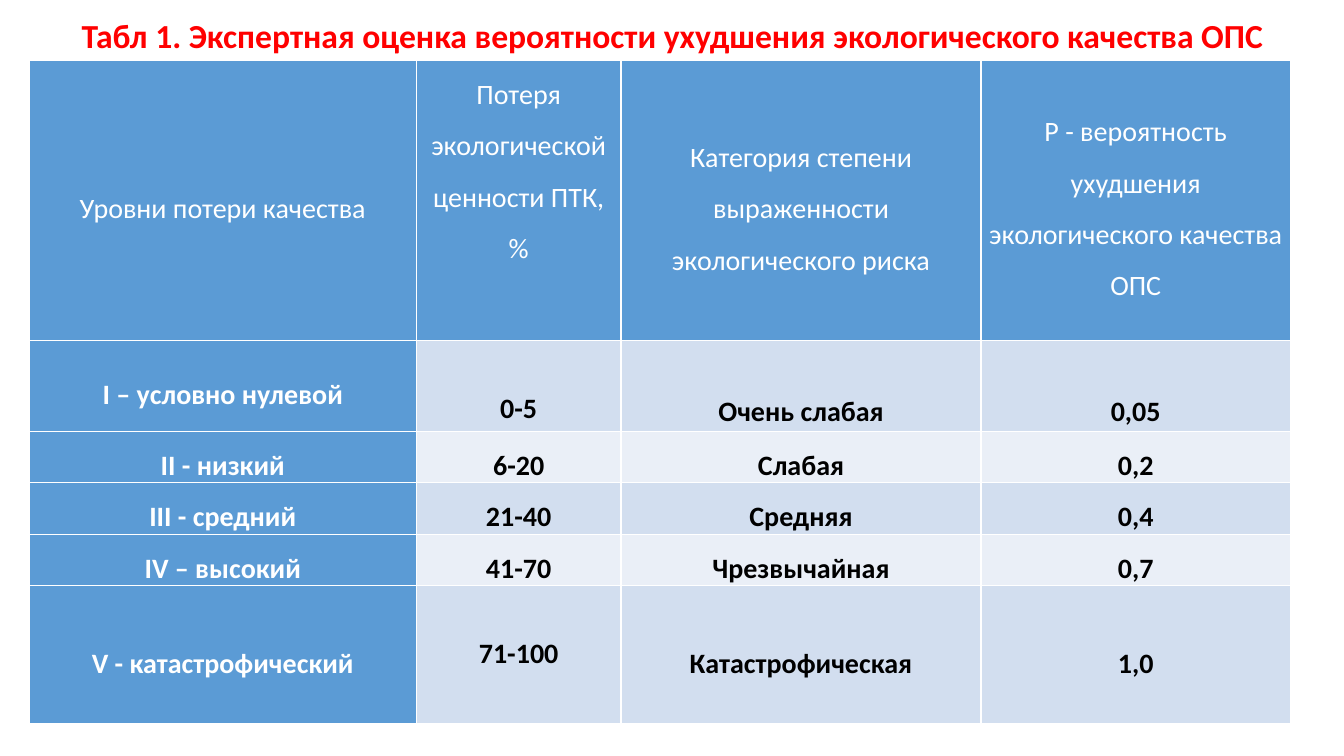
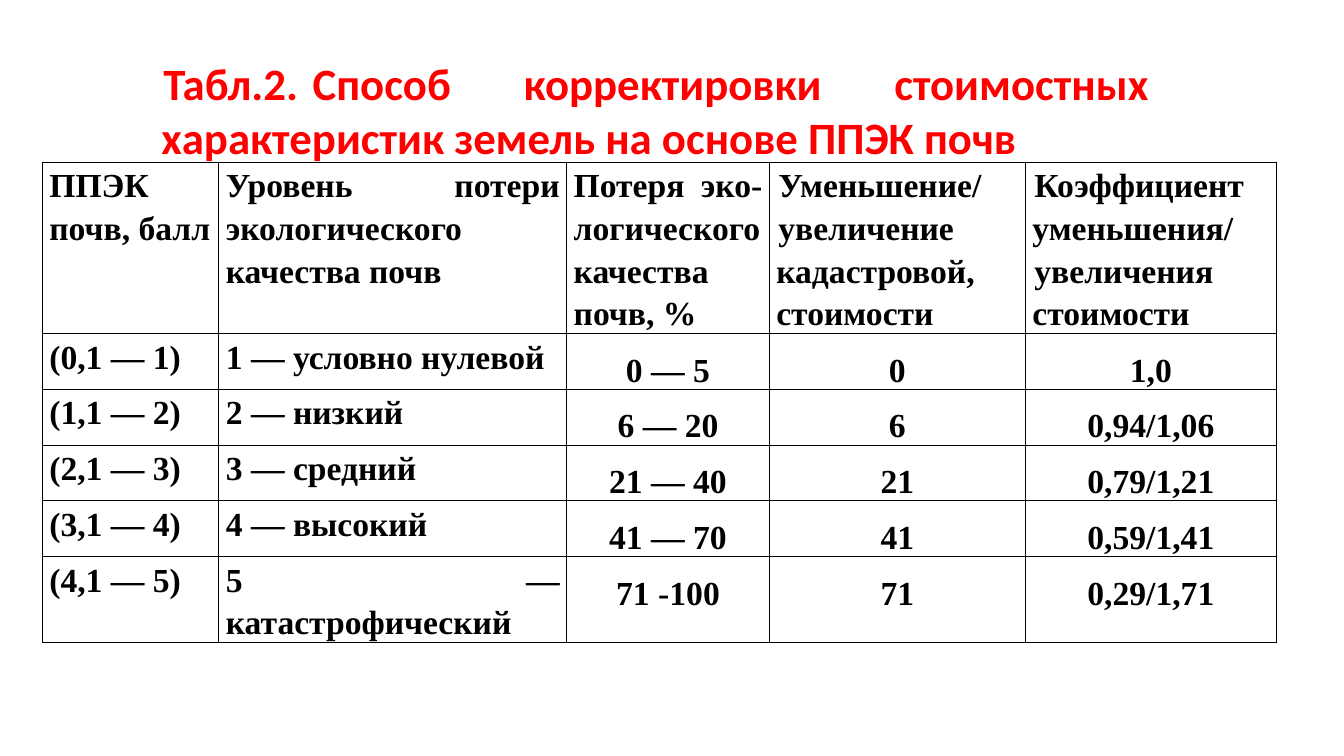
from dataclasses import dataclass

from lxml.etree import SubElement
from pptx import Presentation
from pptx.dml.color import RGBColor
from pptx.enum.text import MSO_ANCHOR, MSO_AUTO_SIZE, PP_ALIGN
from pptx.oxml.ns import qn
from pptx.util import Inches, Pt


@dataclass(frozen=True)
class Theme:
    """Colours, fonts and type sizes shared by the slides."""

    title: str = "FF0000"
    accent: str = "5B9BD5"
    band_dark: str = "D2DEEF"
    band_light: str = "EAEFF7"
    light: str = "FFFFFF"
    dark: str = "000000"
    sans: str = "Calibri"
    serif: str = "Times New Roman"
    small_title: int = 24
    large_title: int = 32
    risk_text: int = 20
    cost_text: int = 24
    border: float = 1


THEME = Theme()
FIRST_LINE = Inches(0.02)
LOWERED = Inches(0.34)

RISK_COLUMNS = [3.84, 2.03, 3.57, 3.07]
RISK_HEIGHTS = [2.78, 0.9, 0.51, 0.51, 0.51, 1.37]
RISK_ROWS = [
    ["Уровни потери качества", "Потеря экологической ценности ПТК, %",
     "Категория степени выраженности экологического риска",
     "P - вероятность ухудшения экологического качества ОПС"],
    ["I – условно нулевой", "0-5", "Очень слабая", "0,05"],
    ["II - низкий", "6-20", "Слабая", "0,2"],
    ["III - средний", "21-40", "Средняя", "0,4"],
    ["IV – высокий", "41-70", "Чрезвычайная", "0,7"],
    ["V - катастрофический", "71-100", "Катастрофическая", "1,0"],
]
LOWERED_CELLS = {(1, 1), (1, 2), (1, 3), (5, 1)}

COST_COLUMNS = [1.75, 3.45, 2.01, 2.54, 2.49]
COST_HEIGHTS = [1.7, 0.55, 0.55, 0.55, 0.55, 0.85]
COST_ROWS = [
    ["ППЭК почв, балл", "Уровень потери экологического качества почв",
     "Потеря эко-логического качества почв, %",
     "Уменьшение/\nувеличение кадастровой, стоимости",
     "Коэффициент уменьшения/\nувеличения стоимости"],
    ["(0,1 — 1)", "1 — условно нулевой", "0 — 5", "0", "1,0"],
    ["(1,1 — 2)", "2 — низкий", "6 — 20", "6", "0,94/1,06"],
    ["(2,1 — 3)", "3 — средний", "21 — 40", "21", "0,79/1,21"],
    ["(3,1 — 4)", "4 — высокий", "41 — 70", "41", "0,59/1,41"],
    ["(4,1 — 5)", "5 — катастрофический", "71 -100", "71", "0,29/1,71"],
]


def apply_format(target, values):
    """Set every attribute named in values on the target."""
    for name, value in values.items():
        setattr(target, name, value)


def write_text(frame, text, font, color, para_format, indent=0, tab=None):
    """Fill a text frame and format its paragraphs and spans."""
    frame.text = text
    for para in frame.paragraphs:
        properties = para._p.get_or_add_pPr()
        properties.set("indent", str(indent))
        if tab:
            stops = SubElement(properties, qn("a:tabLst"))
            SubElement(stops, qn("a:tab"), pos=str(tab), algn="l")
        apply_format(para, para_format)
        for span in para.runs:
            apply_format(span.font, font)
            span.font.color.rgb = RGBColor.from_string(color)


def add_title(page, box, text, size, alignment, indent=0, tab=None):
    """Move the title placeholder into the box and write the heading."""
    title = page.shapes.title
    names = ("left", "top", "width", "height")
    apply_format(title, dict(zip(names, map(Inches, box))))
    frame = title.text_frame
    apply_format(frame, {"word_wrap": True, "auto_size": MSO_AUTO_SIZE.NONE,
                         "vertical_anchor": MSO_ANCHOR.MIDDLE})
    font = {"name": THEME.sans, "size": Pt(size), "bold": True}
    write_text(frame, text, font, THEME.title,
               {"alignment": alignment, "line_spacing": 1.0}, indent, tab)


def add_borders(cell, color):
    """Draw the four borders of a cell."""
    properties = cell._tc.get_or_add_tcPr()
    for side in ("lnL", "lnR", "lnT", "lnB"):
        line = SubElement(properties, qn(f"a:{side}"), w=str(Pt(THEME.border)))
        fill = SubElement(line, qn("a:solidFill"))
        SubElement(fill, qn("a:srgbClr"), val=color)


def add_grid(page, left, top, columns, heights, rows, border, style_cell):
    """Place a table whose cells are formatted by the given function."""
    table = page.shapes.add_table(
        len(rows), len(columns), Inches(left), Inches(top),
        Inches(sum(columns)), Inches(sum(heights))).table
    apply_format(table, {"first_row": False, "horz_banding": False})
    for column, width in zip(table.columns, columns):
        column.width = Inches(width)
    for row, height in zip(table.rows, heights):
        row.height = Inches(height)
    for row_index, texts in enumerate(rows):
        for column_index, text in enumerate(texts):
            cell = table.cell(row_index, column_index)
            apply_format(cell, {"margin_left": Inches(0.07), "margin_right": Inches(0.07),
                                "margin_top": 0, "margin_bottom": 0})
            add_borders(cell, border)
            style_cell(cell, text, row_index, column_index)


def style_risk_cell(cell, text, row, column):
    """Format a cell of the banded risk table."""
    is_heading = row == 0 or column == 0
    band = THEME.band_dark if row % 2 else THEME.band_light
    cell.fill.solid()
    cell.fill.fore_color.rgb = RGBColor.from_string(THEME.accent if is_heading else band)
    cell.vertical_anchor = MSO_ANCHOR.TOP if column == 1 else MSO_ANCHOR.MIDDLE
    if (row, column) in LOWERED_CELLS:
        cell.margin_top = LOWERED
    font = {"name": THEME.sans, "size": Pt(THEME.risk_text), "bold": row > 0}
    write_text(cell.text_frame, text, font, THEME.light if is_heading else THEME.dark,
               {"alignment": PP_ALIGN.CENTER, "line_spacing": 1.5})


def style_cost_cell(cell, text, row, column):
    """Format a cell of the plain cost table."""
    is_value = row > 0 and column > 1
    cell.fill.background()
    cell.vertical_anchor = MSO_ANCHOR.TOP
    font = {"name": THEME.serif, "size": Pt(THEME.cost_text), "bold": True}
    para_format = {"alignment": PP_ALIGN.CENTER if is_value else PP_ALIGN.JUSTIFY,
                   "line_spacing": 1.5 if is_value else 1.15}
    indent = FIRST_LINE if row == 0 and column > 2 else 0
    write_text(cell.text_frame, text, font, THEME.dark, para_format, indent)


def build_risk_page(page):
    """Build the slide on the probability of decline."""
    add_title(page, (0.29, 0.1, 12.76, 0.5),
              "Табл 1. Экспертная оценка вероятности ухудшения экологического качества ОПС",
              THEME.small_title, PP_ALIGN.CENTER)
    add_grid(page, 0.29, 0.6, RISK_COLUMNS, RISK_HEIGHTS, RISK_ROWS,
             THEME.light, style_risk_cell)


def build_cost_page(page):
    """Build the slide on the correction of land costs."""
    add_title(page, (1.5, 0.5, 10, 1.18),
              "Табл.2.\tСпособ корректировки стоимостных характеристик земель на основе ППЭК почв",
              THEME.large_title, PP_ALIGN.JUSTIFY, FIRST_LINE, Inches(2.15))
    add_grid(page, 0.42, 1.61, COST_COLUMNS, COST_HEIGHTS, COST_ROWS,
             THEME.dark, style_cost_cell)


def main():
    """Create and save the deck."""
    deck = Presentation()
    apply_format(deck, {"slide_width": Inches(13.33), "slide_height": Inches(7.5)})
    for build_page in (build_risk_page, build_cost_page):
        build_page(deck.slides.add_slide(deck.slide_layouts[5]))
    deck.save("out.pptx")


if __name__ == "__main__":
    main()
